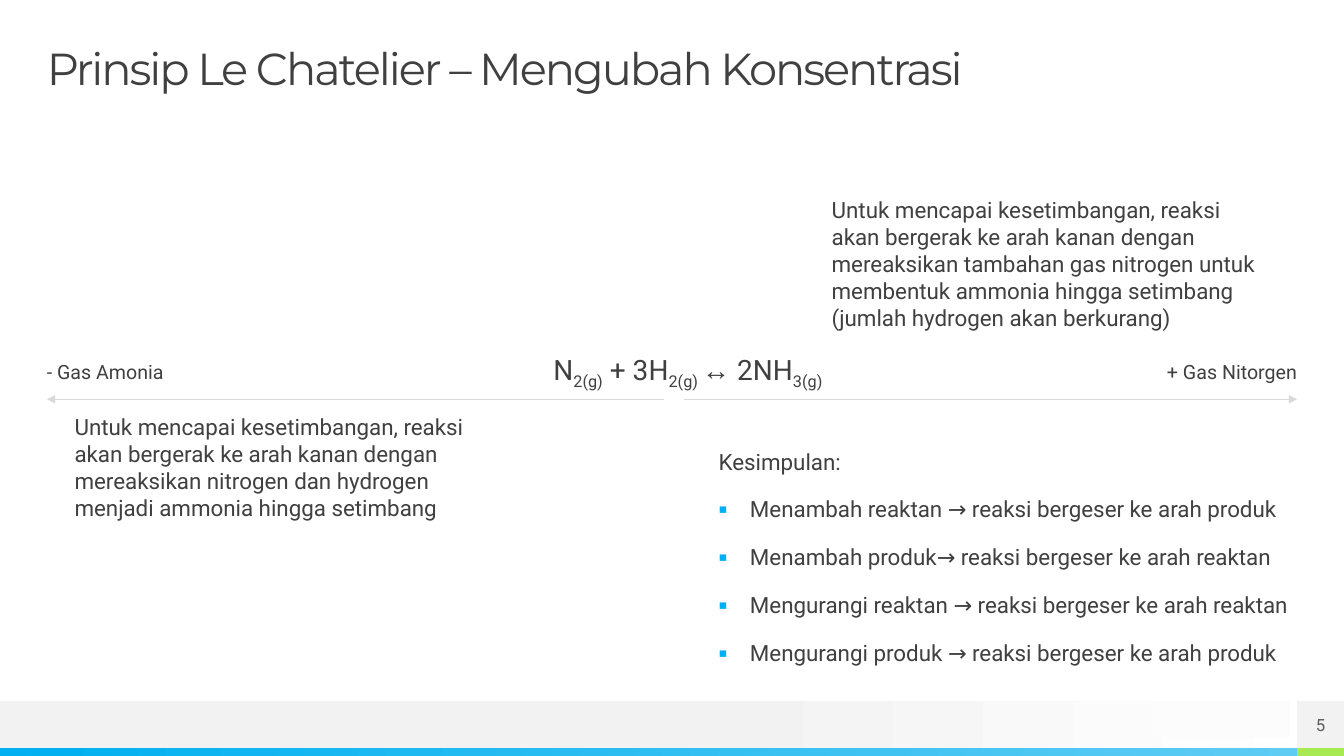
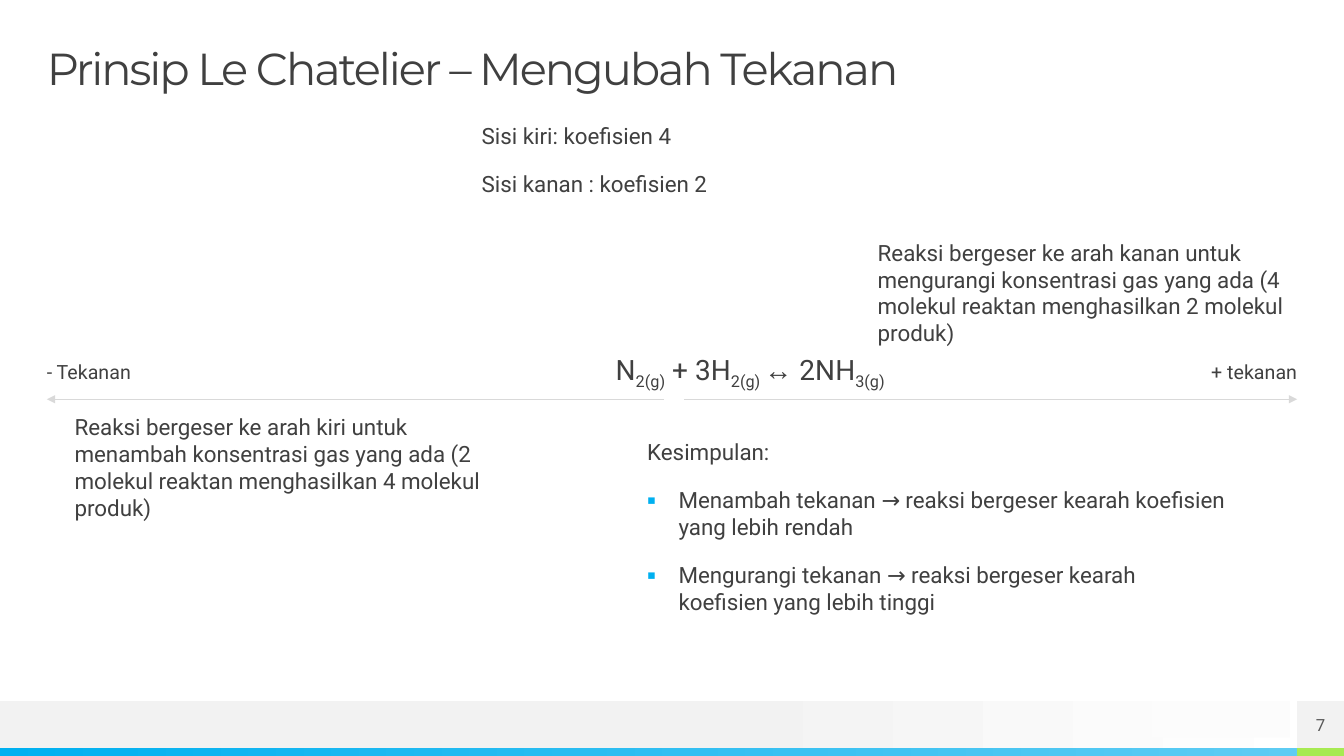
from lxml.etree import SubElement
from pptx import Presentation
from pptx.dml.color import RGBColor
from pptx.enum.shapes import MSO_CONNECTOR, MSO_SHAPE
from pptx.enum.text import MSO_ANCHOR, MSO_AUTO_SIZE, PP_ALIGN
from pptx.oxml.ns import qn
from pptx.util import Cm, Pt

COLORS = {
    "text": "404040", "number": "595959", "axis": "D9D9D9",
    "band": "F2F2F2", "white": "FFFFFF", "patch": "FCFCFC",
    "blue": "00B0F0", "sky": "5ECCF3", "green": "A7EA52",
}
HEADING_FONT, BODY_FONT, ARROW_FONT = "Montserrat", "Roboto", "Times New Roman"

# All lengths are in centimetres
PAGE_W, PAGE_H = 33.87, 19.05
MARGIN = 1.18
RIGHT = PAGE_W - MARGIN
STRIPE_H = 0.2
BAND_H = MARGIN
STRIPE_TOP = PAGE_H - STRIPE_H
BAND_TOP = STRIPE_TOP - BAND_H
AXIS_Y = 10.06
AXIS_GAP = (16.74, 17.25)
LABEL_TOP, LABEL_W, LABEL_H = 9.07, 5.5, 0.71
EQUATION_LEFT, EQUATION_TOP, EQUATION_H = 12.75, 8.89, 1.02
NOTE_W = 10.87
BULLET_INDENT = 0.79

EQUATION = [
    ("N", "base"), ("2(g)", "sub"), (" + 3H", "base"), ("2(g) ", "sub"),
    ("↔", "arrow"), (" 2NH", "base"), ("3(g)", "sub"),
]

SLIDES = [
    {
        "title": "Prinsip Le Chatelier – Mengubah Konsentrasi",
        "number": "5",
        "decrease": "- Gas Amonia",
        "increase": "+ Gas Nitorgen",
        "equation_width": 7.98,
        "notes": [
            ((20.96, 4.95, NOTE_W, 4.45), [
                "Untuk mencapai kesetimbangan, reaksi akan bergerak ke arah kanan "
                "dengan mereaksikan tambahan gas nitrogen untuk membentuk ammonia "
                "hingga setimbang (jumlah hydrogen akan berkurang)"]),
            ((1.88, 10.41, NOTE_W, 4.45), [
                "Untuk mencapai kesetimbangan, reaksi akan bergerak ke arah kanan "
                "dengan mereaksikan nitrogen dan hydrogen menjadi ammonia hingga "
                "setimbang"]),
        ],
        "conclusion_box": (18.11, 11.28, 14.88, 5.51),
        "conclusions": [
            "Menambah reaktan → reaksi bergeser ke arah produk",
            "Menambah produk→ reaksi bergeser ke arah reaktan",
            "Mengurangi reaktan → reaksi bergeser ke arah reaktan",
            "Mengurangi produk → reaksi bergeser ke arah produk",
        ],
    },
    {
        "title": "Prinsip Le Chatelier – Mengubah Tekanan",
        "number": "7",
        "decrease": "- Tekanan",
        "increase": "+ tekanan",
        "equation_width": 9.55,
        "notes": [
            ((22.12, 6.02, NOTE_W, 2.9), [
                "Reaksi bergeser ke arah kanan untuk mengurangi konsentrasi gas "
                "yang ada (4 molekul reaktan menghasilkan 2 molekul produk)"]),
            ((1.88, 10.41, NOTE_W, 3.66), [
                "Reaksi bergeser ke arah kiri untuk menambah konsentrasi gas yang "
                "ada (2 molekul reaktan menghasilkan 4 molekul produk)"]),
            ((12.14, 3.07, NOTE_W, 2.9), [
                "Sisi kiri: koefisien 4", "Sisi kanan : koefisien 2"]),
        ],
        "conclusion_box": (16.31, 11.05, 14.71, 6.65),
        "conclusions": [
            "Menambah tekanan → reaksi bergeser kearah koefisien yang lebih rendah",
            "Mengurangi tekanan → reaksi bergeser kearah koefisien yang lebih tinggi",
        ],
    },
]


def rgb(name):
    return RGBColor.from_string(COLORS[name])


def cm_box(box):
    return [Cm(round(length, 2)) for length in box]


def add_rect(slide, box, *colors, start=0):
    """Add a plain rectangle, or a left-to-right gradient if given two colours."""
    rect = slide.shapes.add_shape(MSO_SHAPE.RECTANGLE, *cm_box(box))
    rect.shadow.inherit = False
    rect.line.fill.background()
    if len(colors) == 1:
        rect.fill.solid()
        rect.fill.fore_color.rgb = rgb(colors[0])
    else:
        rect.fill.gradient()
        rect.fill.gradient_angle = 0
        for stop, color, position in zip(rect.fill.gradient_stops, colors, (start, 1)):
            stop.color.rgb = rgb(color)
            stop.position = position
    return rect


def add_axis_arrow(slide, start, end):
    arrow = slide.shapes.add_connector(
        MSO_CONNECTOR.STRAIGHT, *cm_box((start, AXIS_Y, end, AXIS_Y)))
    arrow.line.color.rgb = rgb("axis")
    arrow.line.width = Pt(0.5)
    SubElement(arrow.line._get_or_add_ln(), qn("a:tailEnd"), type="triangle")
    SubElement(arrow._element.spPr, qn("a:effectLst"))
    return arrow


def add_shared_parts(slide, layout):
    """Draw the footer bands and the axis once and move them to the layout."""
    parts = [
        add_rect(slide, (0, BAND_TOP, PAGE_W, BAND_H), "band", "white", start=0.53),
        add_rect(slide, (0, STRIPE_TOP, RIGHT, STRIPE_H), "blue", "sky"),
        add_rect(slide, (RIGHT, STRIPE_TOP, MARGIN, STRIPE_H), "green"),
        add_rect(slide, (29.03, BAND_TOP, 3.48, 0.91), "patch"),
        add_axis_arrow(slide, AXIS_GAP[0], MARGIN),
        add_axis_arrow(slide, AXIS_GAP[1], RIGHT),
    ]
    for shape_id, part in enumerate(parts, start=20):
        part._element.xpath(".//p:cNvPr")[0].set("id", str(shape_id))
        layout.shapes.element.append(part._element)


def prepare_frame(shape, anchor=MSO_ANCHOR.TOP):
    frame = shape.text_frame
    frame.word_wrap = True
    frame.auto_size = MSO_AUTO_SIZE.NONE
    frame.vertical_anchor = anchor
    frame.margin_left = frame.margin_right = frame.margin_top = frame.margin_bottom = 0
    return frame


def add_run(paragraph, text, size, font=BODY_FONT, color="text"):
    run = paragraph.add_run()
    run.text = text
    run.font.size = Pt(size)
    run.font.name = font
    run.font.color.rgb = rgb(color)
    return run


def space_out(paragraph, align=PP_ALIGN.LEFT):
    paragraph.alignment = align
    paragraph.space_before, paragraph.space_after = Pt(10), Pt(5)


def fill_paragraphs(frame, texts, size, align=PP_ALIGN.LEFT):
    for index, text in enumerate(texts):
        paragraph = frame.add_paragraph() if index else frame.paragraphs[0]
        space_out(paragraph, align)
        add_run(paragraph, text, size)


def add_text(slide, box, texts, size, align=PP_ALIGN.LEFT):
    frame = prepare_frame(slide.shapes.add_textbox(*cm_box(box)))
    fill_paragraphs(frame, texts, size, align)


def place(placeholder, box):
    placeholder.left, placeholder.top, placeholder.width, placeholder.height = cm_box(box)
    return prepare_frame(placeholder)


def set_title(slide, text):
    frame = place(slide.shapes.title, (MARGIN, MARGIN, RIGHT - MARGIN, 1.18))
    paragraph = frame.paragraphs[0]
    paragraph.alignment = PP_ALIGN.LEFT
    paragraph.line_spacing = 0.9
    run = add_run(paragraph, text, 32, HEADING_FONT)
    run.font._element.set("spc", "-150")


def set_conclusions(slide, box, conclusions):
    frame = place(slide.placeholders[1], box)
    fill_paragraphs(frame, ["Kesimpulan:", *conclusions], 16)
    heading, *bullets = frame.paragraphs
    heading_format = heading._p.get_or_add_pPr()
    heading_format.set("marL", "0")
    heading_format.set("indent", "0")
    SubElement(heading_format, qn("a:buNone"))
    for bullet in bullets:
        bullet_format = bullet._p.get_or_add_pPr()
        bullet_format.set("marL", str(Cm(BULLET_INDENT)))
        bullet_format.set("indent", str(-Cm(BULLET_INDENT)))
        bullet_color = SubElement(bullet_format, qn("a:buClr"))
        SubElement(bullet_color, qn("a:srgbClr"), val=COLORS["blue"])
        SubElement(bullet_format, qn("a:buFont"), typeface=BODY_FONT)
        SubElement(bullet_format, qn("a:buChar"), char="▪")


def add_equation(slide, width):
    box = (EQUATION_LEFT, EQUATION_TOP, width, EQUATION_H)
    paragraph = prepare_frame(slide.shapes.add_textbox(*cm_box(box))).paragraphs[0]
    space_out(paragraph, PP_ALIGN.RIGHT)
    for text, role in EQUATION:
        run = add_run(paragraph, text, 20, ARROW_FONT if role == "arrow" else BODY_FONT)
        if role == "sub":
            run.font._element.set("baseline", "-25000")


def add_page_number(slide, number):
    square = add_rect(slide, (RIGHT, BAND_TOP, MARGIN, BAND_H), "band")
    paragraph = prepare_frame(square, MSO_ANCHOR.MIDDLE).paragraphs[0]
    paragraph.alignment = PP_ALIGN.CENTER
    add_run(paragraph, number, 12, color="number")


def main():
    deck = Presentation()
    deck.slide_width, deck.slide_height = Cm(PAGE_W), Cm(PAGE_H)
    layout = deck.slide_layouts[1]
    for index, content in enumerate(SLIDES):
        slide = deck.slides.add_slide(layout)
        if index == 0:
            add_shared_parts(slide, layout)
        set_title(slide, content["title"])
        add_text(slide, (MARGIN, LABEL_TOP, LABEL_W, LABEL_H), [content["decrease"]], 14)
        add_text(slide, (RIGHT - LABEL_W, LABEL_TOP, LABEL_W, LABEL_H),
                 [content["increase"]], 14, PP_ALIGN.RIGHT)
        add_equation(slide, content["equation_width"])
        for box, texts in content["notes"]:
            add_text(slide, box, texts, 16)
        set_conclusions(slide, content["conclusion_box"], content["conclusions"])
        add_page_number(slide, content["number"])
    deck.save("out.pptx")


if __name__ == "__main__":
    main()
